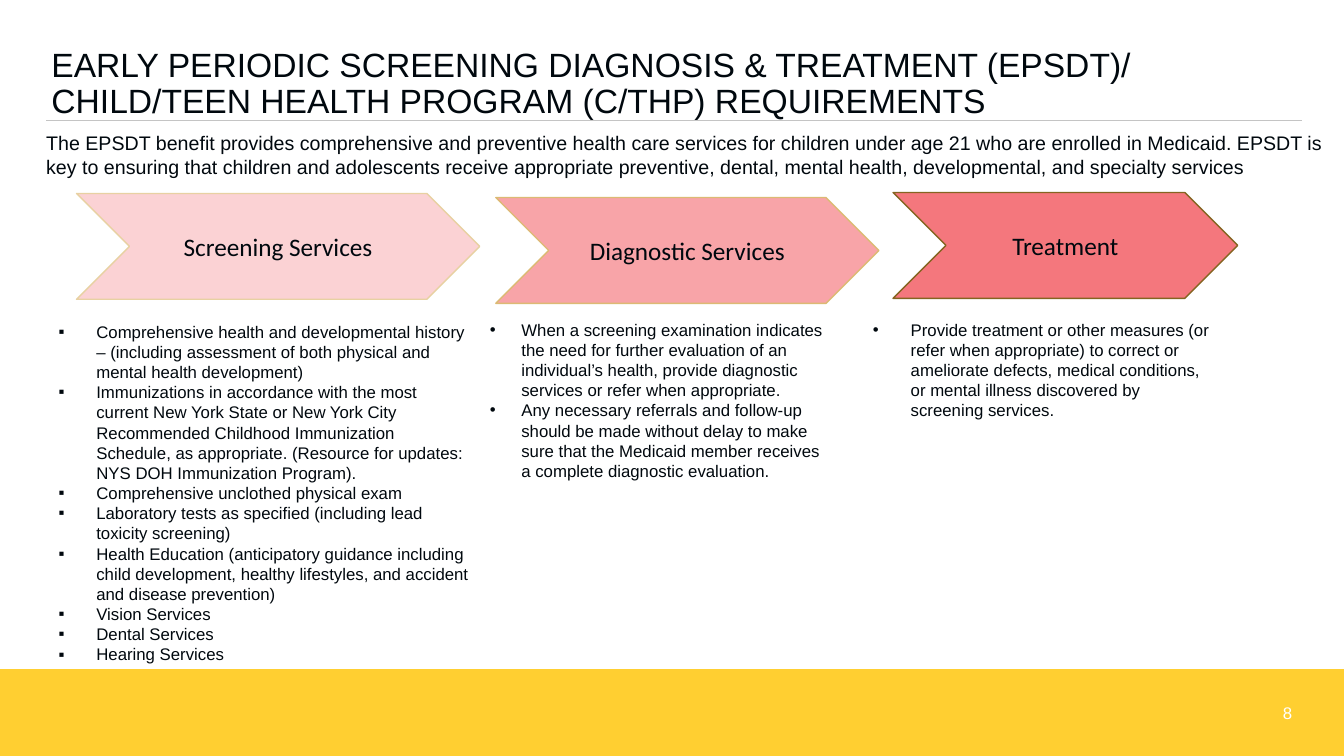
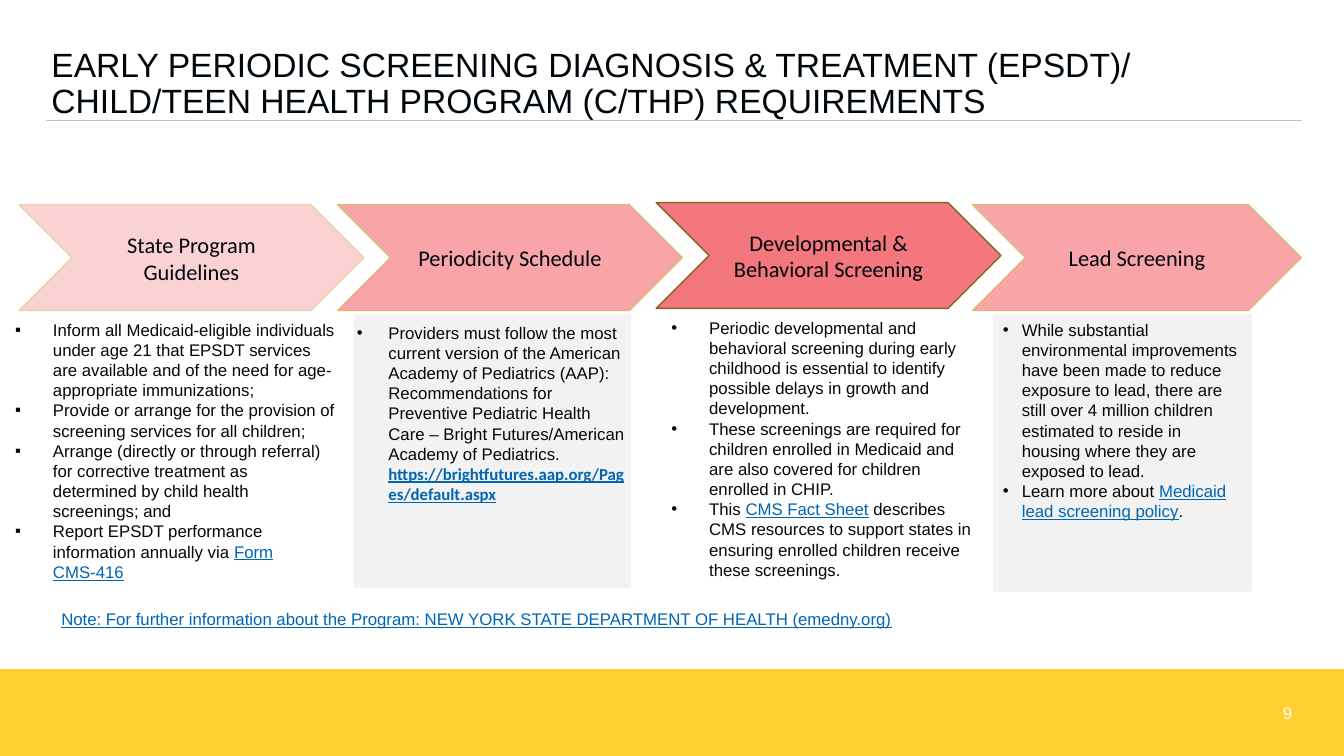
from dataclasses import dataclass
from typing import Optional, Sequence, Union

from lxml import etree
from pptx import Presentation
from pptx.dml.color import RGBColor
from pptx.enum import shapes as shp, text as txt
from pptx.oxml.ns import qn
from pptx.util import Pt

INK = RGBColor(0x00, 0x08, 0x0E)
WHITE = RGBColor(0xFF, 0xFF, 0xFF)
LINK = RGBColor(0x00, 0x65, 0xB2)
BAND = RGBColor(0xFF, 0xCF, 0x31)
RULE = RGBColor(0xC4, 0xC4, 0xC4)
PANEL = RGBColor(0xF2, 0xF2, 0xF2)
# Chevron fill and outline
PALE = (RGBColor(0xFB, 0xD2, 0xD4), RGBColor(0xE8, 0xD1, 0xA2))
MEDIUM = (RGBColor(0xF8, 0xA4, 0xA8), RGBColor(0xDC, 0xBA, 0x74))
STRONG = (RGBColor(0xF4, 0x77, 0x7D), RGBColor(0x85, 0x64, 0x21))

BODY_FONT, STAGE_FONT = "Arial", "Calibri"
SLIDE_W, SLIDE_H = 960, 540
BAND_TOP = 478
RULE_Y = 86.4
CHEVRON_H = 75.6
LEFT, CENTER, RIGHT = txt.PP_ALIGN.LEFT, txt.PP_ALIGN.CENTER, txt.PP_ALIGN.RIGHT
TOP, MIDDLE, BOTTOM = (txt.MSO_ANCHOR.TOP, txt.MSO_ANCHOR.MIDDLE,
                       txt.MSO_ANCHOR.BOTTOM)
TITLE = ("EARLY PERIODIC SCREENING DIAGNOSIS & TREATMENT (EPSDT)/ "
         "CHILD/TEEN HEALTH PROGRAM (C/THP) REQUIREMENTS")


@dataclass(frozen=True)
class Link:
    text: str
    font: str = BODY_FONT
    bold: bool = False


Paragraph = Union[str, Sequence[Union[str, Link]]]


@dataclass(frozen=True)
class Stage:
    label: str
    left: float
    top: float
    width: float
    tones: tuple


@dataclass(frozen=True)
class Details:
    box: tuple
    items: Sequence[Paragraph]
    bullet: str = "•"
    indent: float = 27
    fill: Optional[RGBColor] = None
    margins: tuple = (7.2, 3.6)


def add_bullet(paragraph, bullet: str, indent: float) -> None:
    props = paragraph._p.get_or_add_pPr()
    props.set("marL", str(Pt(indent)))
    props.set("indent", str(-Pt(indent)))
    etree.SubElement(props, qn("a:buFont")).set("typeface", BODY_FONT)
    etree.SubElement(props, qn("a:buChar")).set("char", bullet)


def write_text(frame, paragraphs: Sequence[Paragraph], *, size: float = 12,
               font: str = BODY_FONT, color: RGBColor = INK, align=LEFT,
               anchor=TOP, margins: tuple = (7.2, 3.6), spacing: float = 1,
               bullet: str = "", indent: float = 0) -> None:
    """Fill a frame; margins are horizontal and vertical."""
    frame.word_wrap = True
    frame.auto_size = txt.MSO_AUTO_SIZE.NONE
    frame.vertical_anchor = anchor
    frame.margin_left = frame.margin_right = Pt(margins[0])
    frame.margin_top = frame.margin_bottom = Pt(margins[1])
    for number, content in enumerate(paragraphs):
        paragraph = frame.add_paragraph() if number else frame.paragraphs[0]
        if bullet:
            add_bullet(paragraph, bullet, indent)
        paragraph.alignment = align
        paragraph.line_spacing = spacing
        paragraph.space_before = paragraph.space_after = Pt(0)
        for part in [content] if isinstance(content, str) else content:
            linked = isinstance(part, Link)
            run = paragraph.add_run()
            run.text = part.text if linked else part
            run.font.size = Pt(size)
            run.font.name = part.font if linked else font
            run.font.bold = linked and part.bold
            run.font.underline = linked
            run.font.color.rgb = LINK if linked else color


def place(shape, box: tuple) -> None:
    shape.left, shape.top, shape.width, shape.height = map(Pt, box)


def add_text(slide, box: tuple, content: Paragraph, **style) -> None:
    write_text(slide.shapes.add_textbox(*map(Pt, box)).text_frame,
               [content], **style)


def add_shape(slide, kind, box: tuple, fill: RGBColor,
              outline: Optional[RGBColor] = None):
    shape = slide.shapes.add_shape(kind, *map(Pt, box))
    shape.shadow.inherit = False
    shape.fill.solid()
    shape.fill.fore_color.rgb = fill
    if outline is None:
        shape.line.fill.background()
    else:
        shape.line.color.rgb = outline
        shape.line.width = Pt(1)
    return shape


def add_frame(slide, number: int) -> None:
    """Add the title, rule, bottom band and slide number."""
    place(slide.shapes.title, (36.7, 17.3, 897.8, 69.1))
    write_text(slide.shapes.title.text_frame, [TITLE], size=24,
               anchor=BOTTOM, margins=(0, 0), spacing=0.9)
    add_shape(slide, shp.MSO_SHAPE.RECTANGLE,
              (0, BAND_TOP, SLIDE_W, SLIDE_H - BAND_TOP), BAND)
    rule = slide.shapes.add_connector(
        shp.MSO_CONNECTOR.STRAIGHT, Pt(33), Pt(RULE_Y), Pt(930), Pt(RULE_Y))
    rule.line.color.rgb = RULE
    rule.line.width = Pt(0.75)
    etree.SubElement(rule._element.spPr, qn("a:effectLst"))
    add_text(slide, (714.2, 494.6, 216, 28.8), str(number),
             color=WHITE, align=RIGHT, anchor=MIDDLE)


def add_stage(slide, stage: Stage, size: float) -> None:
    chevron = add_shape(slide, shp.MSO_SHAPE.CHEVRON,
                        (stage.left, stage.top, stage.width, CHEVRON_H),
                        *stage.tones)
    write_text(chevron.text_frame, [stage.label], size=size, font=STAGE_FONT,
               align=CENTER, anchor=MIDDLE)


def fill_details(holder, details: Details) -> None:
    place(holder, details.box)
    if details.fill is not None:
        holder.fill.solid()
        holder.fill.fore_color.rgb = details.fill
    write_text(holder.text_frame, details.items, margins=details.margins,
               bullet=details.bullet, indent=details.indent)


def add_process_slide(deck, number: int, stages: Sequence[Stage],
                      columns: Sequence[Details], stage_size: float):
    slide = deck.slides.add_slide(deck.slide_layouts.get_by_name("Comparison"))
    add_frame(slide, number)
    holders = [h for h in slide.placeholders if h.placeholder_format.idx]
    for holder, details in zip(holders, columns):
        fill_details(holder, details)
    for unused in holders[len(columns):]:
        unused._element.getparent().remove(unused._element)
    for stage in stages:
        add_stage(slide, stage, stage_size)
    return slide


SERVICE_STAGES = [
    Stage("Screening Services", 54.7, 138.2, 288, PALE),
    Stage("Diagnostic Services", 354.2, 141.1, 273.6, MEDIUM),
    Stage("Treatment", 637.9, 137.5, 246.2, STRONG),
]
SERVICE_DETAILS = [
    Details((34.6, 226.1, 308.2, 269.3), [
        "Comprehensive health and developmental history – (including "
        "assessment of both physical and mental health development)",
        "Immunizations in accordance with the most current New York State or "
        "New York City Recommended Childhood Immunization Schedule, as "
        "appropriate. (Resource for updates: NYS DOH Immunization Program).",
        "Comprehensive unclothed physical exam",
        "Laboratory tests as specified (including lead toxicity screening)",
        "Health Education (anticipatory guidance including child development, "
        "healthy lifestyles, and accident and disease prevention)",
        "Vision Services",
        "Dental Services",
        "Hearing Services",
    ], bullet="▪"),
    Details((342.7, 224.6, 259.2, 123.8), [
        "When a screening examination indicates the need for further "
        "evaluation of an individual’s health, provide diagnostic services "
        "or refer when appropriate.",
        "Any necessary referrals and follow-up should be made without delay "
        "to make sure that the Medicaid member receives a complete "
        "diagnostic evaluation.",
    ], indent=22.5),
    Details((616.3, 224.6, 256.3, 79.9), [
        "Provide treatment or other measures (or refer when appropriate) to "
        "correct or ameliorate defects, medical conditions, or mental illness "
        "discovered by screening services.",
    ]),
]
PROGRAM_STAGES = [
    Stage("State Program Guidelines", 13.7, 146.2, 246.2, PALE),
    Stage("Periodicity Schedule", 241.2, 146.2, 246.2, MEDIUM),
    Stage("Developmental & Behavioral Screening", 468.7, 144.7, 246.2, STRONG),
    Stage("Lead Screening", 694.8, 146.2, 234.7, MEDIUM),
]
PROGRAM_DETAILS = [
    Details((3.6, 224.6, 243.4, 225.4), [
        "Inform all Medicaid-eligible individuals under age 21 that EPSDT "
        "services are available and of the need for age-appropriate "
        "immunizations;",
        "Provide or arrange for the provision of screening services for all "
        "children;",
        "Arrange (directly or through referral) for corrective treatment as "
        "determined by child health screenings; and",
        ["Report EPSDT performance information annually via ",
         Link("Form CMS-416")],
    ], bullet="▪"),
    Details((252.7, 224.6, 198, 195.1), [
        ["Providers must follow the most current version of the American "
         "Academy of Pediatrics (AAP): Recommendations for Preventive "
         "Pediatric Health Care – Bright Futures/American Academy of "
         "Pediatrics. ",
         Link("https://brightfutures.aap.org/Pages/default.aspx",
              font=STAGE_FONT, bold=True)],
    ], indent=22.5, fill=PANEL, margins=(2.2, 5.8)),
    Details((472.3, 223.2, 231.1, 196.6), [
        "Periodic developmental and behavioral screening during early "
        "childhood is essential to identify possible delays in growth and "
        "development.",
        "These screenings are required for children enrolled in Medicaid and "
        "are also covered for children enrolled in CHIP.",
        ["This ", Link("CMS Fact Sheet"),
         " describes CMS resources to support states in ensuring enrolled "
         "children receive these screenings."],
    ]),
    Details((709.2, 224.6, 185, 198), [
        "While substantial environmental improvements have been made to "
        "reduce exposure to lead, there are still over 4 million children "
        "estimated to reside in housing where they are exposed to lead.",
        ["Learn more about ", Link("Medicaid lead screening policy"), "."],
    ], indent=13.5, fill=PANEL),
]


def main() -> None:
    deck = Presentation()
    deck.slide_width, deck.slide_height = Pt(SLIDE_W), Pt(SLIDE_H)

    services = add_process_slide(deck, 8, SERVICE_STAGES, SERVICE_DETAILS, 18)
    add_text(services, (25.9, 90, 933.8, 41),
             "The EPSDT benefit provides comprehensive and preventive health "
             "care services for children under age 21 who are enrolled in "
             "Medicaid. EPSDT is key to ensuring that children and "
             "adolescents receive appropriate preventive, dental, mental "
             "health, developmental, and specialty services", size=14)

    program = add_process_slide(deck, 9, PROGRAM_STAGES, PROGRAM_DETAILS, 16)
    add_text(program, (36.7, 431.3, 883.4, 21.6),
             [Link("Note: For further information about the Program: NEW YORK "
                   "STATE DEPARTMENT OF HEALTH (emedny.org)")])
    deck.save("out.pptx")


if __name__ == "__main__":
    main()
